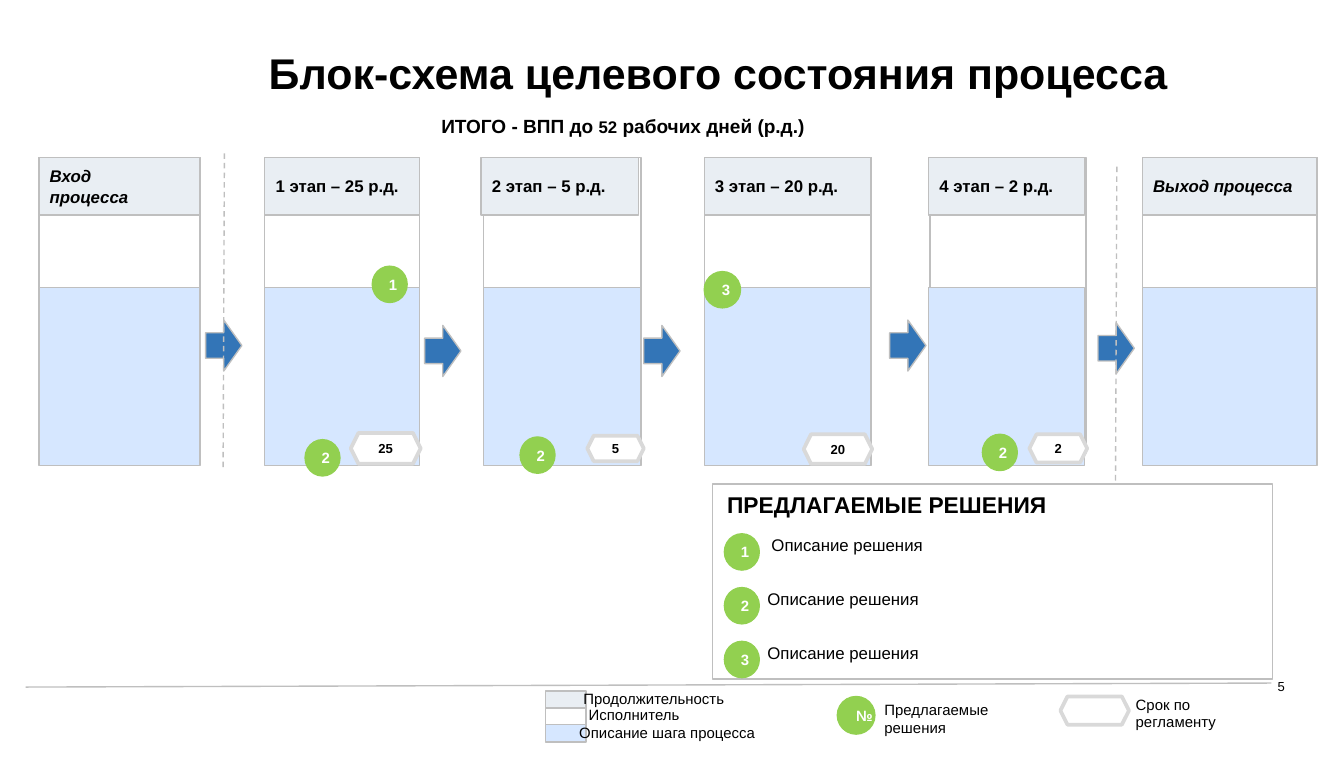
from dataclasses import dataclass

import pptx
import pptx.dml.color
import pptx.enum.dml
import pptx.enum.shapes
import pptx.enum.text
import pptx.oxml.ns
import pptx.util
from lxml import etree

Inches, Pt = pptx.util.Inches, pptx.util.Pt
RGBColor = pptx.dml.color.RGBColor
MSO_SHAPE = pptx.enum.shapes.MSO_SHAPE
PP_ALIGN = pptx.enum.text.PP_ALIGN
MSO_ANCHOR = pptx.enum.text.MSO_ANCHOR

BLACK = RGBColor(0x00, 0x00, 0x00)
WHITE = RGBColor(0xFF, 0xFF, 0xFF)
GREY_LINE = RGBColor(0xBF, 0xBF, 0xBF)
TERM_LINE = RGBColor(0xD9, 0xD9, 0xD9)
HEAD_FILL = RGBColor(0xE9, 0xEE, 0xF3)
STEP_FILL = RGBColor(0xD6, 0xE7, 0xFF)
ARROW_FILL = RGBColor(0x33, 0x75, 0xB7)
GREEN = RGBColor(0x92, 0xD0, 0x50)


@dataclass
class Stage:
    left: float
    width: float
    title: str
    italic: bool = False
    head_shift: float = 0
    performer_shift: float = 0


@dataclass
class Mark:
    left: float
    top: float
    text: str
    width: float = 0.26
    height: float = 0.27


@dataclass
class Label:
    left: float
    top: float
    width: float
    height: float
    text: str


STAGES = [
    Stage(0.29, 1.2, "Вход\nпроцесса", italic=True),
    Stage(1.97, 1.15, "1 этап – 25 р.д."),
    Stage(3.6, 1.17, "2 этап – 5 р.д.", head_shift=-0.02),
    Stage(5.24, 1.24, "3 этап – 20 р.д."),
    Stage(6.91, 1.16, "4 этап – 2 р.д.", performer_shift=0.01),
    Stage(8.5, 1.3, "Выход процесса", italic=True),
]
ARROWS = [(1.53, 2.38), (3.16, 2.42), (4.79, 2.42), (6.62, 2.38), (8.17, 2.4)]
TERMS = [
    Mark(2.61, 3.22, "25", 0.52, 0.23),
    Mark(4.37, 3.24, "5", 0.42, 0.19),
    Mark(5.98, 3.23, "20", 0.51, 0.22),
    Mark(7.66, 3.23, "2", 0.43, 0.21),
    Mark(7.89, 5.18, "", 0.51, 0.21),
]
BADGES = [
    Mark(2.77, 1.98, "1"),
    Mark(5.24, 2.02, "3", 0.27),
    Mark(2.27, 3.27, "2"),
    Mark(3.87, 3.25, "2"),
    Mark(7.31, 3.23, "2"),
    Mark(6.23, 5.18, "№", 0.28, 0.28),
]
LEGEND_ROWS = [
    (HEAD_FILL, Label(4.34, 5.13, 1.22, 0.13, "Продолжительность")),
    (WHITE, Label(4.38, 5.25, 0.77, 0.13, "Исполнитель")),
    (STEP_FILL, Label(4.31, 5.38, 1.5, 0.13, "Описание шага процесса")),
]
LEGEND_NOTES = [
    Label(6.58, 5.21, 1.23, 0.27, "Предлагаемые решения"),
    Label(8.45, 5.17, 0.69, 0.4, "Срок по регламенту"),
]


def write(sp, text, *, size, color=BLACK, bold=False, italic=False,
          align=PP_ALIGN.LEFT, anchor=MSO_ANCHOR.TOP, margins=(0, 0, 0, 0),
          wrap=True, spacing=None) -> None:
    """Fill a shape; text is a string or a list of (text, size) runs."""
    tf = sp.text_frame
    tf.word_wrap = wrap
    tf.vertical_anchor = anchor
    tf.margin_left, tf.margin_top, tf.margin_right, tf.margin_bottom = map(Inches, margins)
    lines = [[(t, size)] for t in text.split("\n")] if isinstance(text, str) else [text]
    for i, runs in enumerate(lines):
        p = tf.add_paragraph() if i else tf.paragraphs[0]
        p.alignment = align
        if spacing:
            p.line_spacing = spacing
        for run_text, run_size in runs:
            r = p.add_run()
            r.text = run_text
            r.font.name = "Arial"
            r.font.size = Pt(run_size)
            r.font.bold, r.font.italic = bold, italic
            r.font.color.rgb = color


def add_label(s, label: Label, text=None, **fmt) -> None:
    box = s.shapes.add_textbox(*map(Inches, (label.left, label.top, label.width, label.height)))
    write(box, text or label.text, **fmt)


def add_shape(s, kind, left: float, top: float, width: float, height: float,
              fill=None, line=GREY_LINE, weight: float = 0.75):
    sp = s.shapes.add_shape(kind, *map(Inches, (left, top, width, height)))
    sp.shadow.inherit = False
    if fill is None:
        sp.fill.background()
    else:
        sp.fill.solid()
        sp.fill.fore_color.rgb = fill
    sp.line.color.rgb = line
    sp.line.width = Pt(weight)
    return sp


def add_stage(s, stage: Stage) -> None:
    rect = MSO_SHAPE.RECTANGLE
    add_shape(s, rect, stage.left + stage.performer_shift, 1.17, stage.width, 2.2, WHITE)
    add_shape(s, rect, stage.left, 2.14, stage.width, 1.32, STEP_FILL)
    head = add_shape(s, rect, stage.left + stage.head_shift, 1.17, stage.width, 0.43, HEAD_FILL)
    write(head, stage.title, size=9, bold=True, italic=stage.italic,
          anchor=MSO_ANCHOR.MIDDLE, margins=(0.08, 0.04, 0.04, 0.04))


def add_term(s, m: Mark) -> None:
    sp = add_shape(s, MSO_SHAPE.HEXAGON, m.left, m.top, m.width, m.height, WHITE, TERM_LINE, 2)
    sp.adjustments[0] = 0.25
    if m.text:
        write(sp, m.text, size=7, bold=True, align=PP_ALIGN.CENTER,
              anchor=MSO_ANCHOR.MIDDLE, margins=(0.1, 0.08, 0.1, 0.08))


def add_badge(s, m: Mark) -> None:
    sp = add_shape(s, MSO_SHAPE.OVAL, m.left, m.top, m.width, m.height, GREEN, GREEN)
    write(sp, m.text, size=8, color=WHITE, bold=True, align=PP_ALIGN.CENTER,
          anchor=MSO_ANCHOR.MIDDLE, margins=(0.1, 0.1, 0.1, 0.1))


def add_line(s, x1: float, y1: float, x2: float, y2: float, dashed: bool = False) -> None:
    cn = s.shapes.add_connector(pptx.enum.shapes.MSO_CONNECTOR.STRAIGHT,
                                *map(Inches, (x1, y1, x2, y2)))
    cn.line.color.rgb = GREY_LINE
    cn.line.width = Pt(0.75)
    if dashed:
        cn.line.dash_style = pptx.enum.dml.MSO_LINE.DASH
    etree.SubElement(cn._element.spPr, pptx.oxml.ns.qn("a:effectLst"))


def main() -> None:
    prs = pptx.Presentation()
    prs.slide_width, prs.slide_height = Inches(10), Inches(5.63)
    s = prs.slides.add_slide(prs.slide_layouts[6])

    # Title, total duration and page number
    add_label(s, Label(2, 0.39, 7.17, 0.36, "Блок-схема целевого состояния процесса"),
              size=23, bold=True, spacing=0.9)
    add_label(s, Label(0.92, 0.85, 7.43, 0.17, ""),
              [("ИТОГО - ВПП до ", 10.2), ("52", 9), (" рабочих дней (р.д.)", 10.2)],
              size=10.2, bold=True, align=PP_ALIGN.CENTER)
    add_label(s, Label(8.95, 5.01, 0.61, 0.15, "5"), size=7,
              align=PP_ALIGN.RIGHT, anchor=MSO_ANCHOR.BOTTOM)

    # Process stages, arrows and borders of the process
    for stage in STAGES:
        add_stage(s, stage)
    for left, top in ARROWS:
        add_shape(s, MSO_SHAPE.RIGHT_ARROW, left, top, 0.27, 0.38, ARROW_FILL)
    add_line(s, 1.67, 1.14, 1.66, 3.5, dashed=True)
    add_line(s, 8.31, 1.24, 8.3, 3.6, dashed=True)

    # Terms and solution numbers
    for term in TERMS:
        add_term(s, term)
    for badge in BADGES:
        add_badge(s, badge)

    # Proposed solutions
    add_shape(s, MSO_SHAPE.RECTANGLE, 5.3, 3.6, 4.17, 1.45)
    add_label(s, Label(5.41, 3.65, 2.75, 0.2, "ПРЕДЛАГАЕМЫЕ РЕШЕНИЯ"), size=12.2, bold=True)
    for i, left in enumerate((5.74, 5.71, 5.71)):
        top = 3.97 + 0.4 * i
        add_badge(s, Mark(5.39, top, str(i + 1)))
        add_label(s, Label(left, top + 0.01, 3.59, 0.15, "Описание решения"), size=9)

    # Legend
    add_line(s, 0.19, 5.11, 9.46, 5.08)
    for i, (fill, label) in enumerate(LEGEND_ROWS):
        add_shape(s, MSO_SHAPE.RECTANGLE, 4.06, 5.14 + 0.125 * i, 0.3, 0.13, fill)
        add_label(s, label, size=8, wrap=False)
    for label in LEGEND_NOTES:
        add_label(s, label, size=8)

    prs.save("out.pptx")


if __name__ == "__main__":
    main()
